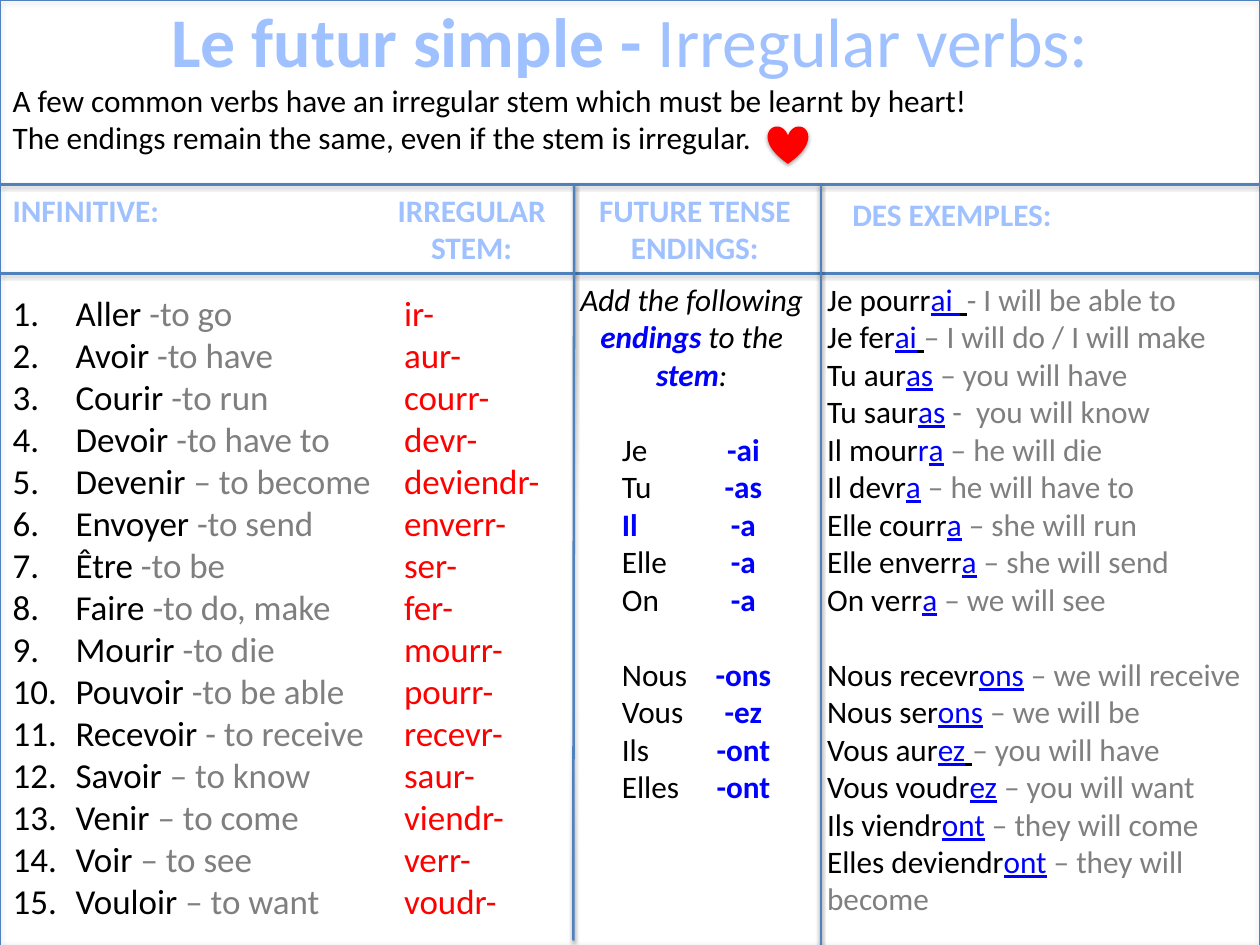
from lxml.etree import SubElement
from pptx import Presentation
from pptx.dml.color import RGBColor
from pptx.enum.shapes import MSO_CONNECTOR, MSO_SHAPE
from pptx.enum.text import MSO_ANCHOR, PP_ALIGN
from pptx.oxml.ns import qn
from pptx.util import Inches, Pt

BLACK = RGBColor(0x00, 0x00, 0x00)
BLUE = RGBColor(0x00, 0x00, 0xFF)
RED = RGBColor(0xFF, 0x00, 0x00)
GREY = RGBColor(0x7F, 0x7F, 0x7F)
HEADING = RGBColor(0xA0, 0xC1, 0xFF)
RULE = RGBColor(0x4F, 0x81, 0xBD)
BODY, LIST, TITLE = 25, 28, 55.8
BLANK_LINE = Pt(30)

VERBS = [
    ("Aller", "-to go", "ir-"),
    ("Avoir", "-to have", "aur-"),
    ("Courir", "-to run", "courr-"),
    ("Devoir", "-to have to", "devr-"),
    ("Devenir", "– to become", "deviendr-"),
    ("Envoyer", "-to send", "enverr-"),
    ("Être", "-to be", "ser-"),
    ("Faire", "-to do, make", "fer-"),
    ("Mourir", "-to die", "mourr-"),
    ("Pouvoir", "-to be able", "pourr-"),
    ("Recevoir", "- to receive", "recevr-"),
    ("Savoir", "– to know", "saur-"),
    ("Venir", "– to come", "viendr-"),
    ("Voir", "– to see", "verr-"),
    ("Vouloir", "– to want", "voudr-"),
]
ENDINGS = [
    ("Je", "-ai"), ("Tu", "-as"), ("Il", "-a"), ("Elle", "-a"), ("On", "-a"),
    ("Nous", "-ons"), ("Vous", "-ez"), ("Ils", "-ont"), ("Elles", "-ont"),
]
# stem (a part after | is blue), ending, whether the gap is underlined, meaning
EXAMPLES = [
    ("Je pourr", "ai ", True, "- I will be able to"),
    ("Je fer", "ai", True, "– I will do / I will make"),
    ("Tu aur", "as", False, "– you will have"),
    ("Tu saur", "as", False, "-  you will know"),
    ("Il mour|r", "a", False, "– he will die"),
    ("Il devr", "a", False, "– he will have to"),
    ("Elle courr", "a", False, "– she will run"),
    ("Elle enverr", "a", False, "– she will send"),
    ("On verr", "a", False, "– we will see"),
    ("Nous recevr", "ons", False, "– we will receive"),
    ("Nous ser", "ons", False, "– we will be"),
    ("Vous aur", "ez", True, "– you will have"),
    ("Vous voudr", "ez", False, "– you will want"),
    ("Ils viendr", "ont", False, "– they will come"),
    ("Elles deviendr", "ont", False, "– they will become"),
]


def write_lines(frame, lines, size, align=PP_ALIGN.LEFT, tabs=()):
    """Fill a text frame; a line is a list of (text, colour, style letters b, i, u)."""
    frame.word_wrap = True
    frame.margin_left = frame.margin_right = Inches(0.14)
    frame.margin_top = frame.margin_bottom = Inches(0.07)
    for index, line in enumerate(lines):
        para = frame.paragraphs[0] if index == 0 else frame.add_paragraph()
        para.alignment = align
        if tabs:
            stops = SubElement(para._p.get_or_add_pPr(), qn("a:tabLst"))
            for place, kind in tabs:
                SubElement(stops, qn("a:tab"), pos=str(Inches(place)), algn=kind)
        for text, colour, style in line:
            span = para.add_run()
            span.text = text
            font = span.font
            font.name, font.size, font.color.rgb = "Calibri", Pt(size), colour
            font.bold, font.italic = "b" in style, "i" in style
            font.underline = "u" in style


def add_shadow(shape, opacity, distance):
    effects = SubElement(shape._element.spPr, qn("a:effectLst"))
    shadow = SubElement(effects, qn("a:outerShdw"), blurRad=str(Pt(3.1)),
                        dist=str(Pt(distance)), dir="5400000", rotWithShape="0")
    black = SubElement(shadow, qn("a:srgbClr"), val="000000")
    SubElement(black, qn("a:alpha"), val=str(opacity * 1000))


deck = Presentation()
deck.slide_width, deck.slide_height = Inches(14), Inches(10.5)
page = deck.slides.add_slide(deck.slide_layouts[5])

# Title
title = page.shapes.title
title.left, title.top = Inches(0.7), Inches(0.04)
title.width, title.height = Inches(12.6), Inches(0.81)
title.text_frame.vertical_anchor = MSO_ANCHOR.MIDDLE
write_lines(title.text_frame,
            [[("Le futur simple - ", HEADING, "b"), ("Irregular verbs:", HEADING, "")]],
            TITLE, PP_ALIGN.CENTER)

# Frame, rules and heart
border = page.shapes.add_shape(MSO_SHAPE.RECTANGLE, 0, Inches(0.01), Inches(14), Inches(10.49))
border.fill.background()
border.line.color.rgb = RULE
border.line.width = Pt(0.75)
add_shadow(border, 35, 1.8)

for x1, y1, x2, y2 in [(0, 2.05, 14, 2.05), (0, 3.04, 14, 3.04),
                       (6.38, 2.05, 6.37, 10.45), (9.12, 2.05, 9.12, 10.5)]:
    rule = page.shapes.add_connector(MSO_CONNECTOR.STRAIGHT, Inches(x1), Inches(y1),
                                     Inches(x2), Inches(y2))
    rule.line.color.rgb = RULE
    rule.line.width = Pt(2)
    add_shadow(rule, 38, 1.6)

heart = page.shapes.add_shape(MSO_SHAPE.HEART, Inches(8.53), Inches(1.4),
                              Inches(0.45), Inches(0.42))
heart.fill.solid()
heart.fill.fore_color.rgb = RED
heart.line.fill.background()
add_shadow(heart, 35, 1.8)

# Introduction and column headings
intro = [[("A few common verbs have an irregular stem which must be learnt by heart!", BLACK, "")],
         [("The endings remain the same, even if the stem is irregular.", BLACK, "")]]
verb_heading = [[("INFINITIVE:\tIRREGULAR", HEADING, "b")], [("\tSTEM:", HEADING, "b")]]
ending_heading = [[("FUTURE TENSE ENDINGS:", HEADING, "b")]]
example_heading = [[("DES EXEMPLES:", HEADING, "b")]]

# Column contents
infinitives = [[(verb + " ", BLACK, ""), (meaning, GREY, "")] for verb, meaning, _ in VERBS]
stems = [[(stem, RED, "")] for _, _, stem in VERBS]

endings = [[("Add the following ", BLACK, "i"), ("endings", BLUE, "bi"), (" to the ", BLACK, "i"),
            ("stem", BLUE, "bi"), (":", BLACK, "i")]]
for person, ending in ENDINGS:
    look = (BLUE, "b") if person == "Il" else (BLACK, "")
    endings.append([("\t" + person + "\t", *look), (ending, BLUE, "b")])

examples = []
for stem, ending, underlined, meaning in EXAMPLES:
    black_part, _, blue_part = stem.partition("|")
    line = [(black_part, BLACK, "")]
    if blue_part:
        line.append((blue_part, BLUE, ""))
    line += [(ending, BLUE, "u"), (" ", BLACK, "u" if underlined else ""), (meaning, GREY, "")]
    examples.append(line)

LEFT, CENTER = PP_ALIGN.LEFT, PP_ALIGN.CENTER
frames = []
for left, top, width, height, lines, size, align, tabs in [
    (0, 0.83, 14, 0.99, intro, BODY, LEFT, ()),
    (0, 2.05, 6.37, 0.99, verb_heading, BODY, LEFT, [(5.1, "ctr")]),
    (6.24, 2.05, 2.96, 0.99, ending_heading, BODY, CENTER, ()),
    (9.33, 2.1, 4.67, 0.9, example_heading, BODY, LEFT, ()),
    (0, 3.17, 4.62, 7.25, infinitives, LIST, LEFT, ()),
    (4.35, 3.17, 2.1, 7.25, stems, LIST, LEFT, ()),
    (6.21, 3.04, 2.95, 6.08, endings, BODY, LEFT, [(0.56, "l"), (1.91, "ctr")]),
    (9.05, 3.04, 4.95, 7.35, examples, BODY, LEFT, ()),
]:
    box = page.shapes.add_textbox(Inches(left), Inches(top), Inches(width), Inches(height))
    write_lines(box.text_frame, lines, size, align, tabs)
    frames.append(box.text_frame)

# Numbering and group gaps
infinitive_frame, _, ending_frame, example_frame = frames[4:]
for para in infinitive_frame.paragraphs:
    properties = para._p.get_or_add_pPr()
    properties.set("marL", str(Inches(0.7)))
    properties.set("indent", str(-Inches(0.7)))
    SubElement(properties, qn("a:buFont"), typeface="+mj-lt")
    SubElement(properties, qn("a:buAutoNum"), type="arabicPeriod")
ending_frame.paragraphs[0].alignment = CENTER
for para in (ending_frame.paragraphs[1], ending_frame.paragraphs[6], example_frame.paragraphs[9]):
    para.space_before = BLANK_LINE

deck.save("out.pptx")
